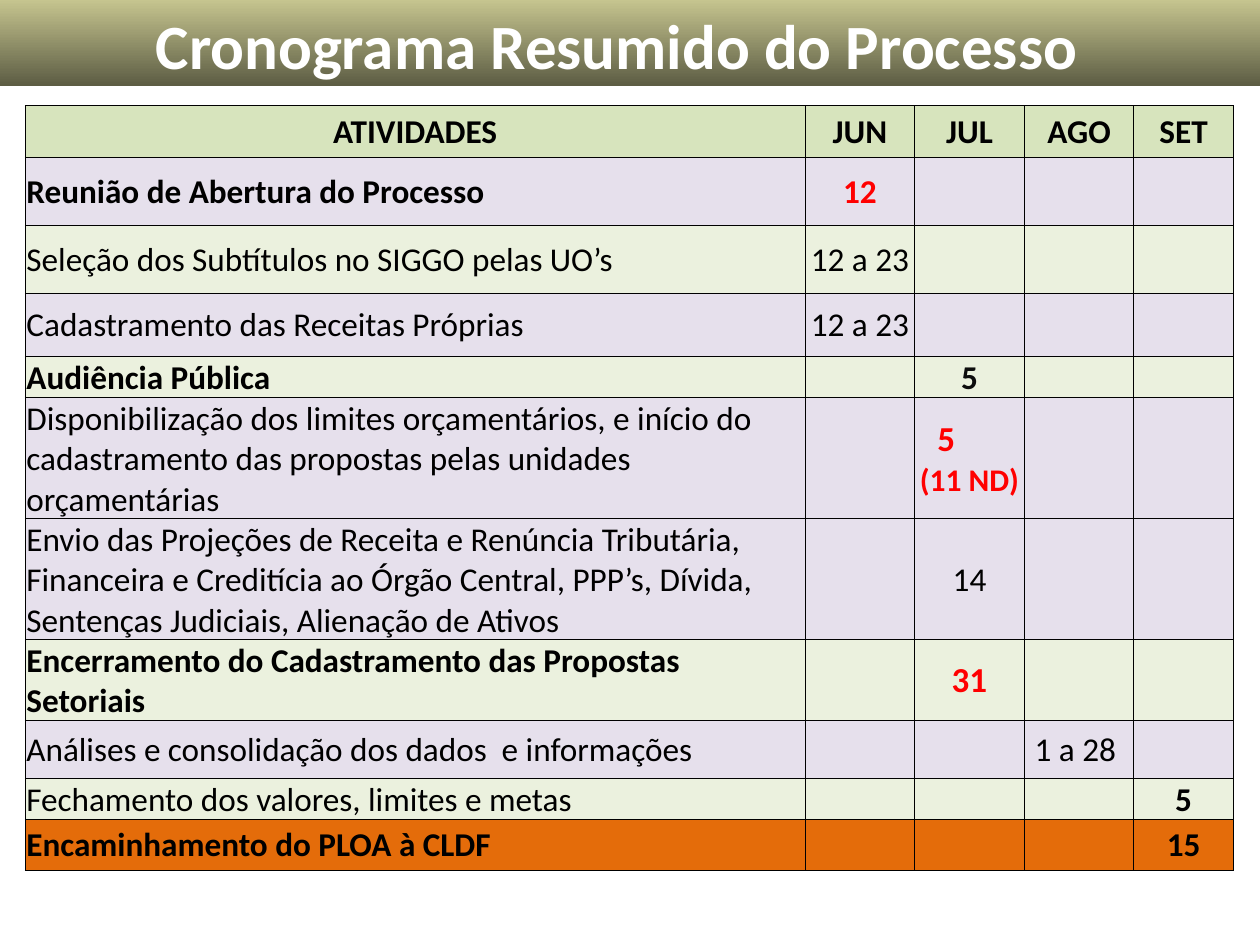
from pptx import Presentation
from pptx.dml.color import RGBColor
from pptx.enum.shapes import MSO_SHAPE as Shape
from pptx.enum.text import MSO_ANCHOR as Anchor, PP_ALIGN as Align
from pptx.oxml import parse_xml
from pptx.oxml.ns import nsdecls
from pptx.util import Inches, Pt

BLACK, RED, WHITE = "000000", "FF0000", "FFFFFF"
HEADER, LILAC, GREEN, ORANGE = "D7E4BD", "E6E0EC", "EBF1DE", "E46C0A"
JUN, JUL, AGO, SET = range(1, 5)


def rgb(code):
    return RGBColor.from_string(code)


class SlideBuilder:
    font = "Calibri"
    body_size = 19

    def __init__(self, slide):
        self.slide = slide

    def run(self, paragraph, text, size=body_size, color=BLACK, bold=False):
        run = paragraph.add_run()
        run.text = text
        run.font.name = self.font
        run.font.size = Pt(size)
        run.font.bold = bold
        run.font.color.rgb = rgb(color)

    def gradient_band(self, box, colors):
        band = self.slide.shapes.add_shape(Shape.RECTANGLE, *map(Inches, box))
        band.shadow.inherit = False
        band.line.fill.background()
        band.fill.gradient()
        band.fill.gradient_angle = 270
        for stop, position, color in zip(band.fill.gradient_stops, (0, 1), colors):
            stop.position = position
            stop.color.rgb = rgb(color)

    def title(self, box, text):
        frame = self.slide.shapes.add_textbox(*map(Inches, box)).text_frame
        frame.word_wrap = True
        frame.paragraphs[0].alignment = Align.CENTER
        self.run(frame.paragraphs[0], text, 36, WHITE, True)

    def table(self, left, top, widths, heights):
        frame = self.slide.shapes.add_table(
            len(heights), len(widths), Inches(left), Inches(top),
            Inches(sum(widths)), Inches(sum(heights)))
        table = frame.table
        table.first_row = table.horz_banding = False
        for column, width in zip(table.columns, widths):
            column.width = Inches(width)
        for row, height in zip(table.rows, heights):
            row.height = Inches(height)
        return table

    def cell(self, cell, fill, text="", align=Align.CENTER, **style):
        cell.margin_left = cell.margin_right = cell.margin_top = Inches(0.01)
        cell.margin_bottom = 0
        cell.vertical_anchor = Anchor.MIDDLE
        for side in ("lnL", "lnR", "lnT", "lnB"):
            cell._tc.get_or_add_tcPr().append(parse_xml(
                f'<a:{side} {nsdecls("a")} w="{Pt(0.5)}"><a:solidFill>'
                f'<a:srgbClr val="{BLACK}"/></a:solidFill></a:{side}>'))
        cell.fill.solid()
        cell.fill.fore_color.rgb = rgb(fill)
        paragraph = cell.text_frame.paragraphs[0]
        paragraph.alignment = align
        if text:
            self.run(paragraph, text, **style)
        else:
            paragraph.font.size = Pt(12)


# Schedule: height, fill, activity, bold activity, month, date, date style
STRONG = {"bold": True}
ALERT = {"bold": True, "color": RED}
BIG_ALERT = {**ALERT, "size": 20}
MONTHS = ["JUN", "JUL", "AGO", "SET"]
ACTIVITIES = [
    (0.54, LILAC, "Reunião de Abertura do Processo", True, JUN, "12", ALERT),
    (0.54, GREEN, "Seleção dos Subtítulos no SIGGO pelas UO’s", False, JUN, "12 a 23", {}),
    (0.5, LILAC, "Cadastramento das Receitas Próprias", False, JUN, "12 a 23", {}),
    (0.26, GREEN, "Audiência Pública", True, JUL, "5", {"bold": True, "color": "0D0D0D"}),
    (0.9, LILAC, "Disponibilização dos limites orçamentários, e início do "
     "cadastramento das propostas pelas unidades orçamentárias", False, JUL, "5", BIG_ALERT),
    (0.9, LILAC, "Envio das Projeções de Receita e Renúncia Tributária, "
     "Financeira e Creditícia ao Órgão Central, PPP’s, Dívida, "
     "Sentenças Judiciais, Alienação de Ativos", False, JUL, "14", {}),
    (0.39, GREEN, "Encerramento do Cadastramento das Propostas Setoriais", True,
     JUL, "31", BIG_ALERT),
    (0.46, LILAC, "Análises e consolidação dos dados  e informações", False,
     AGO, "1 a 28 ", {}),
    (0.3, GREEN, "Fechamento dos valores, limites e metas", False, SET, "5", STRONG),
    (0.4, ORANGE, "Encaminhamento do PLOA à CLDF", True, SET, "15", STRONG),
]
LIMITS_ROW = 5


def main():
    deck = Presentation()
    deck.slide_width, deck.slide_height = Inches(10), Inches(7.5)
    builder = SlideBuilder(deck.slides.add_slide(deck.slide_layouts[6]))

    # Title band
    builder.gradient_band((0, -0.03, 10, 0.71), ("CAC992", "5D5D44"))
    builder.title((0.35, 0, 9.09, 0.71), "Cronograma Resumido do Processo")

    # Table header
    heights = [0.41] + [activity[0] for activity in ACTIVITIES]
    schedule = builder.table(0.2, 0.84, [6.19, 0.87, 0.87, 0.87, 0.79], heights)
    for column, heading in enumerate(["ATIVIDADES"] + MONTHS):
        builder.cell(schedule.cell(0, column), HEADER, heading, bold=True)

    # Activities and their dates
    for row, (_, fill, activity, bold, month, date, style) in enumerate(ACTIVITIES, 1):
        builder.cell(schedule.cell(row, 0), fill, activity, Align.LEFT, bold=bold)
        for column in range(JUN, SET + 1):
            if column == month:
                builder.cell(schedule.cell(row, column), fill, date, **style)
            else:
                builder.cell(schedule.cell(row, column), fill)

    # Second line of the limits date, with the first one indented
    limits_date = schedule.cell(LIMITS_ROW, JUL).text_frame
    day = limits_date.paragraphs[0]
    day.alignment = Align.LEFT
    day._p.get_or_add_pPr().set("marL", str(Inches(0.17)))
    note = limits_date.add_paragraph()
    note.alignment = Align.CENTER
    builder.run(note, "(11 ND)", 18, RED, True)

    deck.save("out.pptx")


if __name__ == "__main__":
    main()
